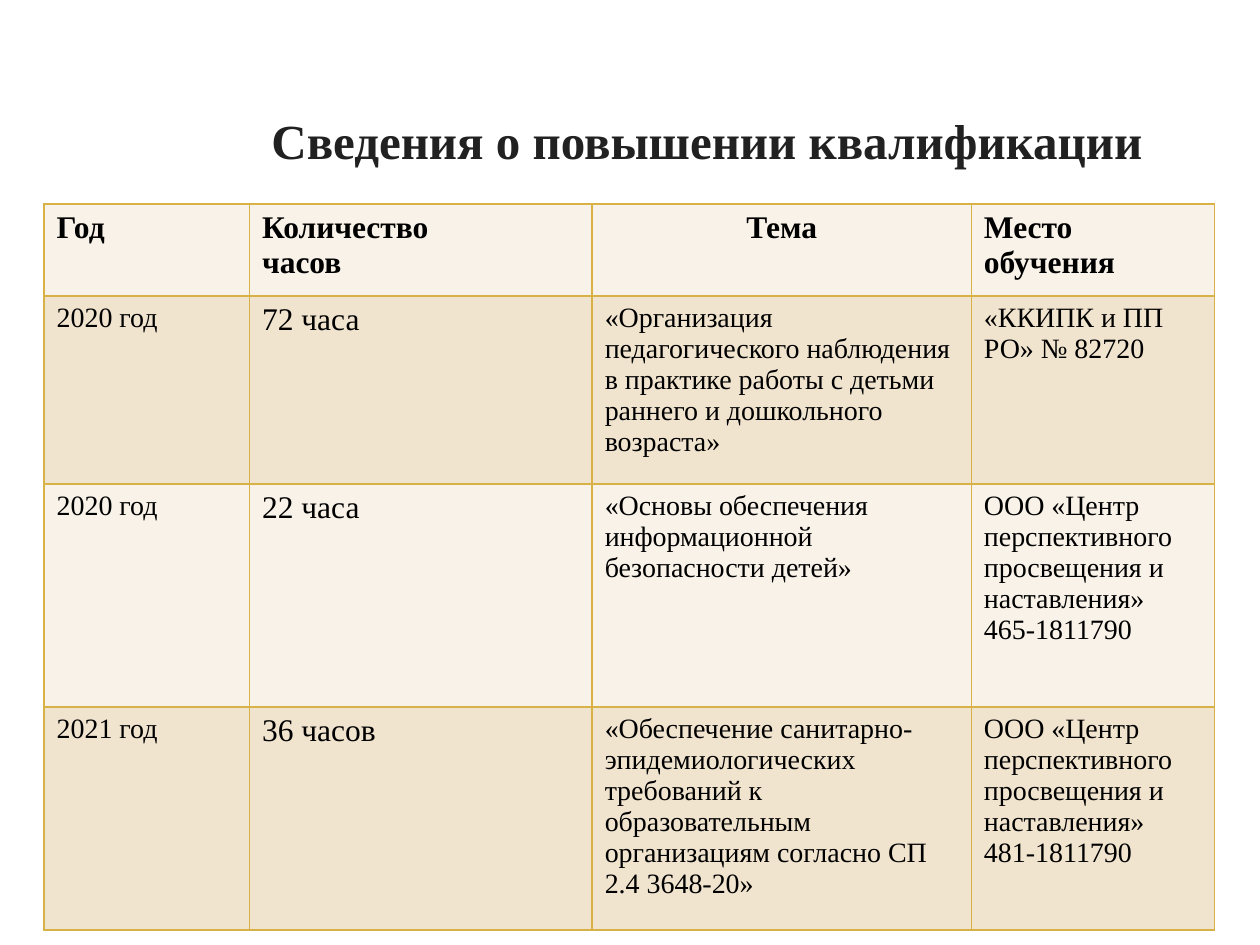
from pptx import Presentation
from pptx.dml.color import RGBColor
from pptx.enum.text import MSO_AUTO_SIZE, PP_ALIGN
from pptx.oxml import parse_xml
from pptx.oxml.ns import nsdecls
from pptx.util import Inches, Pt

CENTER, LEFT = PP_ALIGN.CENTER, PP_ALIGN.LEFT
GROW = MSO_AUTO_SIZE.SHAPE_TO_FIT_TEXT
COLORS = {
    "title": "212121",
    "text": "000000",
    "light": "F8F2E9",
    "dark": "F1E4CF",
    "border": "D9B247",
}
WIDTHS = [1.63, 2.72, 3.01, 1.93]
HEIGHTS = [0.73, 1.49, 1.77, 1.77]
CENTRE = "ООО «Центр перспективного просвещения и наставления»"
ROWS = [
    ["Год", "Количество\nчасов", "Тема", "Место обучения"],
    ["2020 год", "72 часа",
     "«Организация педагогического наблюдения в практике работы "
     "с детьми раннего и дошкольного возраста»",
     "«ККИПК и ПП РО» № 82720"],
    ["2020 год", "22 часа",
     "«Основы обеспечения информационной безопасности детей»",
     f"{CENTRE}\n465-1811790"],
    ["2021 год", "36 часов",
     "«Обеспечение санитарно-эпидемиологических требований к "
     "образовательным организациям согласно СП 2.4 3648-20»",
     f"{CENTRE}\n481-1811790"],
]


class Deck:
    """Holds the style and the current slide."""

    def __init__(self, slide, font, colors):
        self.slide = slide
        self.font = font
        self.colors = colors

    def label(self, frame, text, size, color, bold=False, align=LEFT):
        frame.text = text
        for para in frame.paragraphs:
            para.alignment = align
            for run in para.runs:
                run.font.name = self.font
                run.font.size = Pt(size)
                run.font.bold = bold
                run.font.color.rgb = RGBColor.from_string(self.colors[color])

    def title(self, text, left, top, width, height):
        box = self.slide.shapes.add_textbox(
            Inches(left), Inches(top), Inches(width), Inches(height))
        frame = box.text_frame
        frame.word_wrap = True
        frame.auto_size = GROW
        self.label(frame, text, 28, "title", True, CENTER)

    def border(self, cell):
        props = cell._tc.get_or_add_tcPr()
        for at, side in enumerate(("lnL", "lnR", "lnT", "lnB")):
            props.insert(at, parse_xml(
                f'<a:{side} {nsdecls("a")} w="{Pt(1)}"><a:solidFill>'
                f'<a:srgbClr val="{self.colors["border"]}"/>'
                f'</a:solidFill></a:{side}>'))

    def table(self, rows, left, top, widths, heights):
        table = self.slide.shapes.add_table(
            len(rows), len(widths), Inches(left), Inches(top),
            Inches(sum(widths)), Inches(sum(heights))).table
        for col, width in zip(table.columns, widths):
            col.width = Inches(width)
        for row, height in zip(table.rows, heights):
            row.height = Inches(height)
        for r, texts in enumerate(rows):
            for c, text in enumerate(texts):
                cell = table.cell(r, c)
                head = r == 0
                self.label(cell.text_frame, text, 18 if head or c == 1 else 16,
                           "text", head, CENTER if head and c == 2 else LEFT)
                cell.fill.solid()
                shade = "dark" if r % 2 else "light"
                cell.fill.fore_color.rgb = RGBColor.from_string(
                    self.colors[shade])
                self.border(cell)


def main():
    prs = Presentation()
    prs.slide_width, prs.slide_height = Inches(10), Inches(7.5)
    slide = prs.slides.add_slide(prs.slide_layouts[6])
    deck = Deck(slide, "Times New Roman", COLORS)
    deck.title("Сведения о повышении квалификации", 1.79, 0.83, 7.64, 0.57)
    deck.table(ROWS, 0.35, 1.62, WIDTHS, HEIGHTS)
    prs.save("out.pptx")


if __name__ == "__main__":
    main()
